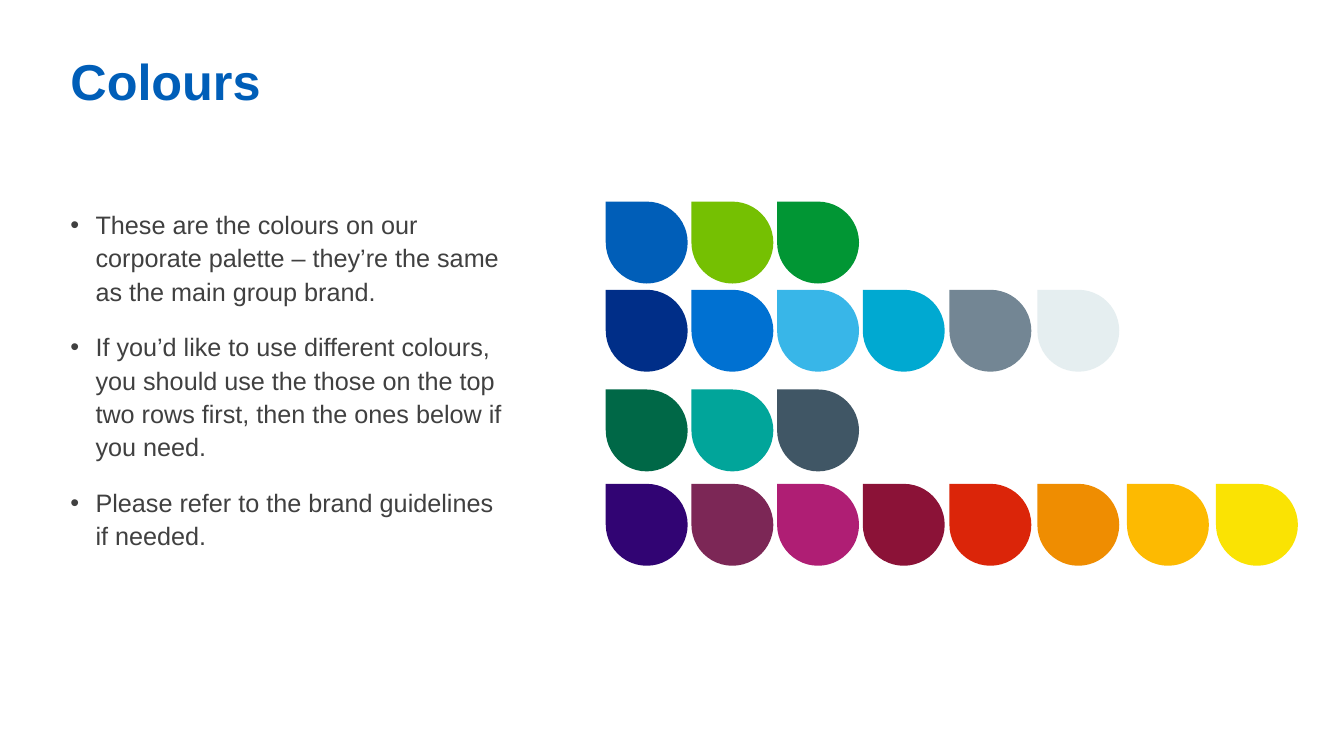
from dataclasses import dataclass

from lxml import etree
from pptx import Presentation
from pptx.dml.color import RGBColor
from pptx.enum.shapes import MSO_SHAPE
from pptx.enum.text import MSO_ANCHOR
from pptx.oxml.ns import qn
from pptx.util import Pt

TEARDROP = MSO_SHAPE.TEAR
TOP = MSO_ANCHOR.TOP


@dataclass(frozen=True)
class Theme:
    font: str = "Arial"
    title_color: str = "005EB8"
    body_color: str = "404040"
    title_size: int = 36
    body_size: int = 18


THEME = Theme()
GUIDANCE = [
    "These are the colours on our corporate palette – they’re the same as the main group brand.",
    "If you’d like to use different colours, you should use the those on the top two rows first, "
    "then the ones below if you need.",
    "Please refer to the brand guidelines if needed.",
]
SWATCH_SIZE = 58.5
COLUMN_LEFTS = [432.7, 493.9, 555.1, 616.3, 678.2, 741, 805, 868.6]
PALETTE_ROWS = [
    (144, ["005EB8", "75C002", "019634"]),
    (207, ["002E88", "0071D2", "38B6E8", "00A9D1", "738694", "E5EEF0"]),
    (278.2, ["006847", "01A59A", "405665"]),
    (345.6, ["310473", "7C2756", "AF1E74", "8B1237", "DB2509", "EF8D01", "FDBA01", "FAE303"]),
]


def set_attributes(target, values):
    for name, value in values.items():
        setattr(target, name, value)


def add_text_frame(slide, left, top, width, height):
    frame = slide.shapes.add_textbox(Pt(left), Pt(top), Pt(width), Pt(height)).text_frame
    set_attributes(frame, {"word_wrap": True, "vertical_anchor": TOP})
    return frame


def add_run(paragraph, text, size, color, bold=False):
    run = paragraph.add_run()
    run.text = text
    set_attributes(run.font, {"name": THEME.font, "size": Pt(size), "bold": bold})
    run.font.color.rgb = RGBColor.from_string(color)


def add_bullet(paragraph, indent):
    properties = paragraph._p.get_or_add_pPr()
    properties.set("marL", str(Pt(indent)))
    properties.set("indent", str(-Pt(indent)))
    etree.SubElement(properties, qn("a:buFont"), typeface=THEME.font)
    etree.SubElement(properties, qn("a:buChar"), char="•")


def add_title(slide, text):
    paragraph = add_text_frame(slide, 43.2, 37.4, 743, 95.8).paragraphs[0]
    paragraph.line_spacing = 0.9
    add_run(paragraph, text, THEME.title_size, THEME.title_color, bold=True)


def add_guidance(slide, points):
    frame = add_text_frame(slide, 43.2, 144, 326.2, 342.7)
    for index, point in enumerate(points):
        paragraph = frame.add_paragraph() if index else frame.paragraphs[0]
        add_bullet(paragraph, 18)
        set_attributes(paragraph, {
            "line_spacing": 1.1,
            "space_before": Pt(10 if index else 0),
            "space_after": Pt(6),
        })
        add_run(paragraph, point, THEME.body_size, THEME.body_color)


def add_swatch(slide, left, top, color):
    swatch = slide.shapes.add_shape(
        TEARDROP, Pt(left), Pt(top), Pt(SWATCH_SIZE), Pt(SWATCH_SIZE))
    swatch.rotation = 270
    swatch.shadow.inherit = False
    swatch.fill.solid()
    swatch.fill.fore_color.rgb = RGBColor.from_string(color)
    swatch.line.fill.background()


def main():
    deck = Presentation()
    set_attributes(deck, {"slide_width": Pt(960), "slide_height": Pt(540)})
    slide = deck.slides.add_slide(deck.slide_layouts[6])
    add_title(slide, "Colours")
    add_guidance(slide, GUIDANCE)
    for top, colors in PALETTE_ROWS:
        for left, color in zip(COLUMN_LEFTS, colors):
            add_swatch(slide, left, top, color)
    deck.save("out.pptx")


if __name__ == "__main__":
    main()
